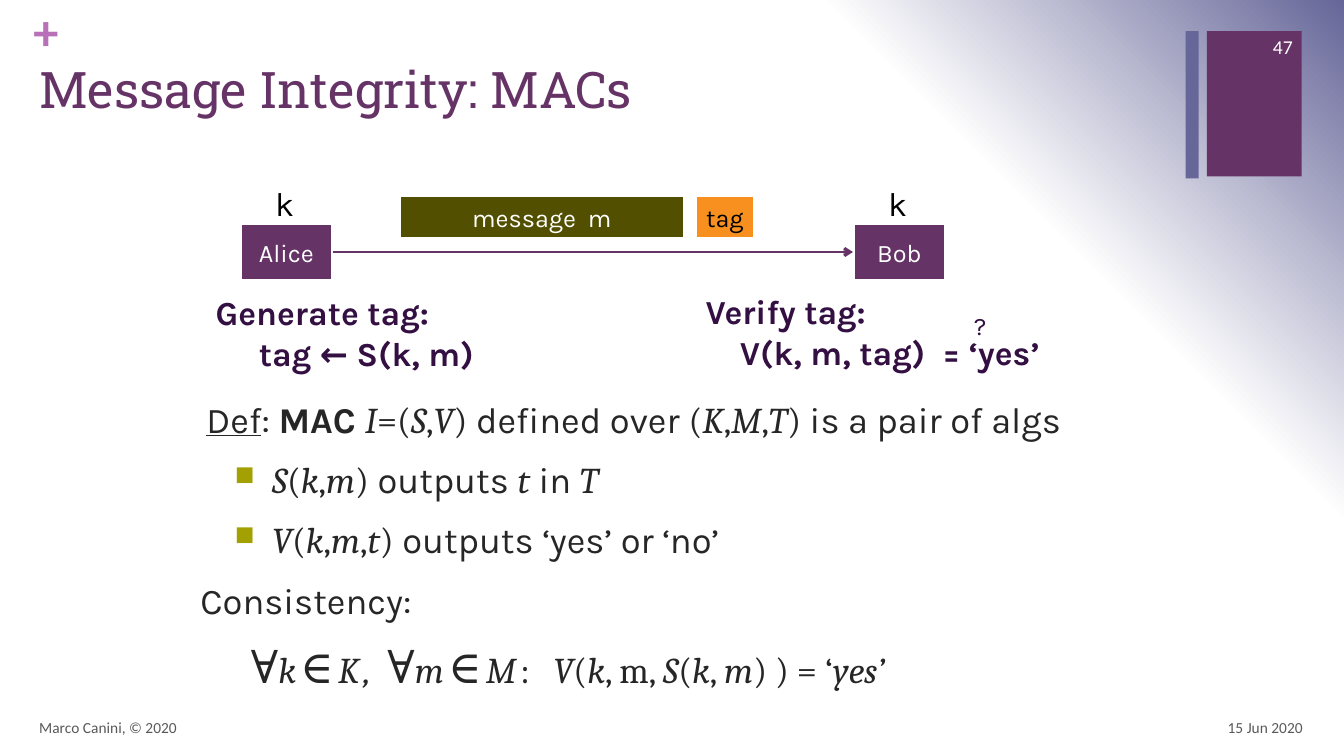
from itertools import groupby

from lxml import etree
from pptx import Presentation
from pptx.dml.color import RGBColor
from pptx.enum.shapes import MSO_CONNECTOR, MSO_SHAPE
from pptx.enum.text import MSO_ANCHOR, PP_ALIGN
from pptx.oxml import parse_xml
from pptx.oxml.ns import nsdecls, qn
from pptx.util import Inches, Pt

RECTANGLE = MSO_SHAPE.RECTANGLE
STRAIGHT = MSO_CONNECTOR.STRAIGHT
TOP, MIDDLE = MSO_ANCHOR.TOP, MSO_ANCHOR.MIDDLE
LEFT, CENTER, RIGHT = PP_ALIGN.LEFT, PP_ALIGN.CENTER, PP_ALIGN.RIGHT

PURPLE = RGBColor(0x66, 0x33, 0x66)
SLATE = RGBColor(0x66, 0x66, 0x99)
ORCHID = RGBColor(0xB8, 0x70, 0xB8)
DARK_PURPLE = RGBColor(0x33, 0x0F, 0x42)
OLIVE = RGBColor(0x52, 0x50, 0x00)
LIME = RGBColor(0xA3, 0xA1, 0x01)
ORANGE = RGBColor(0xF7, 0x90, 0x1E)
INK = RGBColor(0x26, 0x26, 0x26)
GRAY = RGBColor(0x59, 0x59, 0x59)
BLACK = RGBColor(0, 0, 0)
WHITE = RGBColor(0xFF, 0xFF, 0xFF)

SANS, SERIF, SLAB, SMALL = "Karla", "Cambria", "Roboto Slab", "Calibri"
BODY_SIZE, SYMBOL_SIZE = 25.9, 32.4


def add_span(para, text, size=18, font=SANS, color=INK, bold=False,
             italic=False, underline=False, spacing=0):
    span = para.add_run()
    span.text = text
    style = span.font
    style.size, style.name = Pt(size), font
    style.bold, style.italic, style.underline = bold, italic, underline
    style.color.rgb = color
    if spacing:
        span._r.get_or_add_rPr().set("spc", str(spacing * 100))


def indent(para, margin, first=0):
    properties = para._p.get_or_add_pPr()
    properties.set("marL", str(Inches(margin)))
    properties.set("indent", str(Inches(first)))


def add_text(page, text, left, top, width, height, align=LEFT, anchor=TOP,
             wrap=True, inset=True, **style):
    box = page.shapes.add_textbox(
        Inches(left), Inches(top), Inches(width), Inches(height))
    frame = box.text_frame
    frame.word_wrap, frame.vertical_anchor = wrap, anchor
    if not inset:
        frame.margin_left = frame.margin_right = 0
        frame.margin_top = frame.margin_bottom = 0
    para = frame.paragraphs[0]
    para.alignment = align
    if text:
        add_span(para, text, **style)
    return frame


def add_block(page, fill, left, top, width, height, text="", color=WHITE):
    block = page.shapes.add_shape(
        RECTANGLE, Inches(left), Inches(top), Inches(width), Inches(height))
    block.shadow.inherit = False
    block.fill.solid()
    block.fill.fore_color.rgb = fill
    if text:
        block.line.color.rgb = WHITE
        block.line.width = Pt(2.25)
        frame = block.text_frame
        frame.word_wrap, frame.vertical_anchor = False, MIDDLE
        frame.paragraphs[0].alignment = CENTER
        add_span(frame.paragraphs[0], text, color=color)
    else:
        block.line.fill.background()
    return block


def paint_background(page):
    fill = page.background.fill
    fill.gradient()
    old = page.background._cSld.find(".//" + qn("a:gradFill"))
    stops = "".join(
        f'<a:gs pos="{place * 1000}"><a:srgbClr val="{color}"/></a:gs>'
        for place, color in ((0, WHITE), (75, WHITE), (100, SLATE)))
    old.getparent().replace(old, parse_xml(
        f'<a:gradFill {nsdecls("a")} rotWithShape="1"><a:gsLst>{stops}</a:gsLst>'
        '<a:path path="circle"><a:fillToRect l="0" t="100000" r="100000" b="0"/>'
        '</a:path></a:gradFill>'))


def add_header(page, left, top, width):
    right = left + width
    add_block(page, PURPLE, right - 0.95, top + 0.31, 0.94, 1.44)
    add_block(page, SLATE, right - 1.16, top + 0.31, 0.13, 1.46)
    add_text(page, "+", left + 0.04, top, 0.38, 0.61, inset=False,
             size=36, font=SMALL, color=ORCHID, bold=True)
    add_text(page, "Message Integrity: MACs", left, top + 0.53, 11.45, 1.22,
             size=36, font=SLAB, color=PURPLE)
    add_text(page, "47", right - 0.81, top + 0.26, 0.81, 0.4, align=RIGHT,
             anchor=MIDDLE, size=14, font=SMALL, color=WHITE)


def add_step(page, left, top, width, heading, call, margin):
    frame = add_text(page, heading, left, top, width, 0.91,
                     size=24, color=DARK_PURPLE, bold=True)
    para = frame.add_paragraph()
    indent(para, margin)
    add_span(para, call, size=24, color=DARK_PURPLE, bold=True)


def add_exchange(page, left, top):
    people = []
    for name, shift in (("Alice", 0.34), ("Bob", 6.42)):
        people.append(add_block(
            page, PURPLE, left + shift, top + 0.45, 0.92, 0.56, name))
        add_text(page, "k", left + shift + 0.25, top, 0.38, 0.5, wrap=False,
                 size=24, color=BLACK)
    alice, bob = people
    arrow = page.shapes.add_connector(STRAIGHT, 0, 0, 0, 0)
    arrow.begin_connect(alice, 3)
    arrow.end_connect(bob, 1)
    arrow.line.color.rgb = PURPLE
    arrow.line.width = Pt(2)
    etree.SubElement(arrow.line._get_or_add_ln(), qn("a:tailEnd"), type="arrow")
    etree.SubElement(arrow._element.spPr, qn("a:effectLst"))
    add_block(page, OLIVE, left + 1.92, top + 0.17, 2.83, 0.43, "message  m")
    add_block(page, ORANGE, left + 4.86, top + 0.17, 0.58, 0.43, "tag", BLACK)
    add_step(page, left, top + 1.08, 3.58, "Generate tag:", "tag ← S(k, m)", 0.43)
    add_step(page, left + 4.86, top + 1.07, 3.95, "Verify tag:",
             "V(k, m, tag)  = ‘yes’", 0.34)
    add_text(page, "?", left + 7.52, top + 1.26, 0.32, 0.4, wrap=False,
             color=DARK_PURPLE)


def add_words(para, text, **style):
    add_span(para, text, size=BODY_SIZE, **style)


def add_formula(para, text):
    for italic, letters in groupby(text, lambda sign: sign.isalpha() or sign == "’"):
        add_words(para, "".join(letters), font=SERIF, italic=italic)


def add_quantifier(para, member, group):
    add_span(para, "∀", size=SYMBOL_SIZE, font=SERIF)
    add_words(para, member, font=SERIF, italic=True, spacing=3)
    add_span(para, "∈", size=SYMBOL_SIZE, font=SERIF, spacing=3)
    add_words(para, group, font=SERIF, italic=True, spacing=3)


def add_bullet(para):
    indent(para, 0.71, -0.37)
    properties = para._p.get_or_add_pPr()
    color = etree.SubElement(properties, qn("a:buClr"))
    etree.SubElement(color, qn("a:srgbClr"), val=str(LIME))
    etree.SubElement(properties, qn("a:buSzPct"), val="75000")
    etree.SubElement(properties, qn("a:buChar"), char="■")


def add_definition(page, left, top, width, height):
    frame = add_text(page, "", left, top, width, height)
    paras = frame.paragraphs + tuple(frame.add_paragraph() for _ in range(4))
    for para in paras:
        para.space_before = Pt(12)
    opening, signing, verifying, heading, rule = paras

    indent(opening, 0.06)
    add_words(opening, "Def", underline=True)
    add_words(opening, ": ")
    add_words(opening, "MAC ", bold=True)
    add_formula(opening, "I=(S,V)")
    add_words(opening, " defined over ")
    add_formula(opening, "(K,M,T)")
    add_words(opening, " is a pair of algs")

    add_bullet(signing)
    add_formula(signing, "S(k,m)")
    add_words(signing, " outputs ")
    add_formula(signing, "t")
    add_words(signing, " in ")
    add_formula(signing, "T")

    add_bullet(verifying)
    add_formula(verifying, "V(k,m,t)")
    add_words(verifying, " outputs ‘yes’ or ‘no’")

    add_words(heading, "Consistency:")

    indent(rule, 0)
    tabs = etree.SubElement(rule._p.get_or_add_pPr(), qn("a:tabLst"))
    for stop in (2, 5.17):
        etree.SubElement(tabs, qn("a:tab"), pos=str(Inches(stop)), algn="l")
    add_words(rule, "\t")
    add_quantifier(rule, "k", "K, ")
    add_quantifier(rule, "m", "M")
    add_formula(rule, ":\tV(k")
    add_words(rule, ", m, ", font=SERIF)
    add_formula(rule, "S(k, m) ) = ‘yes’")


def add_footer(page, left, top, width):
    style = dict(anchor=MIDDLE, size=11, font=SMALL, color=GRAY)
    add_text(page, "Marco Canini, © 2020", left, top, 8.93, 0.4, **style)
    add_text(page, "15 Jun 2020", left + width - 3.11, top, 3.11, 0.4,
             align=RIGHT, **style)


def main():
    deck = Presentation()
    deck.slide_width, deck.slide_height = Inches(13.33), Inches(7.5)
    page = deck.slides.add_slide(deck.slide_layouts[6])
    paint_background(page)
    add_header(page, 0.29, 0, 12.63)
    add_definition(page, 1.89, 3.89, 9.54, 3.13)
    add_exchange(page, 2.04, 1.77)
    add_footer(page, 0.29, 7.02, 12.73)
    deck.save("out.pptx")


if __name__ == "__main__":
    main()
